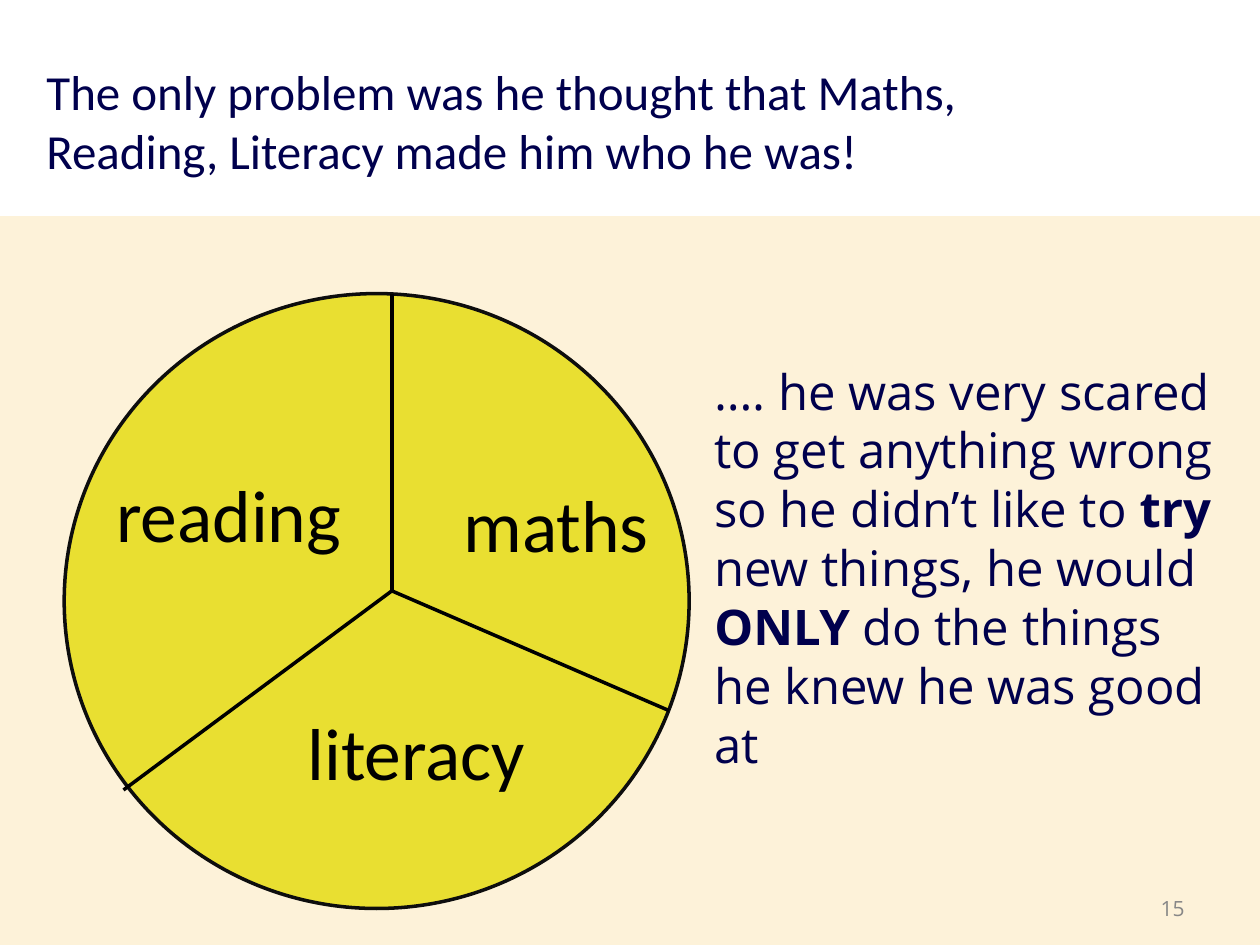
"""Build the slide on the boy who thought three school subjects made him who he was."""
from dataclasses import dataclass

from lxml.etree import SubElement
from pptx import Presentation
from pptx.dml.color import RGBColor
from pptx.enum.shapes import MSO_CONNECTOR, MSO_SHAPE
from pptx.enum.text import MSO_ANCHOR, PP_ALIGN
from pptx.oxml.ns import qn
from pptx.util import Inches, Pt

WIDTH, HEIGHT = Inches(10), Inches(7.5)
NAVY = RGBColor(0x00, 0x00, 0x4D)
BLACK = RGBColor(0x00, 0x00, 0x00)
OUTLINE = RGBColor(0x0D, 0x0D, 0x0D)
GREY = RGBColor(0x87, 0x87, 0x87)
YELLOW = RGBColor(0xE9, 0xDF, 0x31)
CREAM = RGBColor(0xFD, 0xF2, 0xD9)
WHITE = RGBColor(0xFF, 0xFF, 0xFF)
CENTRE = (31.1, 62.53)
SUBJECT_SIZE = (21.3, 10.8)


def to_lengths(*shares: float) -> list[int]:
    """Turn alternating percentages of slide width and height into lengths."""
    return [round(share * (WIDTH, HEIGHT)[index % 2] / 100) for index, share in enumerate(shares)]


@dataclass(frozen=True)
class Box:
    """A rectangle in percentages of the slide's width and height."""
    left: float
    top: float
    width: float
    height: float

    def lengths(self) -> list[int]:
        """Return position and size as slide lengths."""
        return to_lengths(self.left, self.top, self.width, self.height)


@dataclass(frozen=True)
class Label:
    """Text made of (wording, bold) runs, with its place and format."""
    box: Box
    runs: tuple
    font: dict
    frame: dict
    paragraph: dict


@dataclass(frozen=True)
class Sector:
    """A subject of the circle, with its label corner and the rim end of its line."""
    name: str
    corner: tuple
    rim: tuple


SUBJECT_FONT = {"name": "Calibri", "size": Pt(42), "color": BLACK}
HEADING_FONT = {"name": "Calibri", "size": Pt(28), "color": NAVY}
STORY_FONT = {"name": "Open Sans", "size": Pt(28), "color": NAVY}
NUMBER_FONT = {"name": "Open Sans", "size": Pt(12), "color": GREY}
WRAPPED = {"word_wrap": True}
MIDDLE = WRAPPED | {"vertical_anchor": MSO_ANCHOR.MIDDLE}
STORY_MARGINS = {f"margin_{side}": Inches(0.04) for side in ("left", "top", "right", "bottom")}

SECTORS = (
    Sector("maths", (33.5, 50), (31.1, 31.07)),
    Sector("literacy", (22.4, 74.13), (53.1, 75.2)),
    Sector("reading", (7.5, 48.93), (9.8, 83.6)),
)
HEADING = Label(
    Box(2.7, 5.87, 74.8, 13.87),
    (("The only problem was he thought that Maths, Reading, Literacy made him who he was!", False),),
    HEADING_FONT, WRAPPED, {},
)
STORY = Label(
    Box(56.3, 24.8, 41, 70.4),
    (
        ("…. he was very scared to get anything wrong so he didn’t like to ", False),
        ("try", True),
        (" new things, he would ", False),
        ("ONLY", True),
        (" do the things he knew he was good at", False),
    ),
    STORY_FONT, MIDDLE | STORY_MARGINS, {},
)
NUMBER = Label(
    Box(89, 94.13, 6, 3.87), (("15", False),),
    NUMBER_FONT, MIDDLE, {"alignment": PP_ALIGN.RIGHT},
)


def apply_format(target: object, values: dict) -> None:
    """Set each attribute of the target, with colours going to their own object."""
    for name, value in values.items():
        if name == "color":
            target.color.rgb = value
        else:
            setattr(target, name, value)


def draw_shape(slide, kind: MSO_SHAPE, box: Box, fill: RGBColor, line: RGBColor) -> None:
    """Draw a filled and outlined preset shape."""
    shape = slide.shapes.add_shape(kind, *box.lengths())
    shape.shadow.inherit = False
    shape.fill.solid()
    shape.fill.fore_color.rgb = fill
    apply_format(shape.line, {"color": line, "width": Pt(2)})


def draw_label(slide, label: Label) -> None:
    """Draw a text box with one paragraph of runs."""
    frame = slide.shapes.add_textbox(*label.box.lengths()).text_frame
    apply_format(frame, label.frame)
    paragraph = frame.paragraphs[0]
    apply_format(paragraph, label.paragraph)
    for wording, bold in label.runs:
        run = paragraph.add_run()
        run.text = wording
        apply_format(run.font, label.font | {"bold": bold})


def draw_sector(slide, sector: Sector) -> None:
    """Draw the dividing line and the label of one subject."""
    ends = to_lengths(*sector.rim, *CENTRE)
    connector = slide.shapes.add_connector(MSO_CONNECTOR.STRAIGHT, *ends)
    apply_format(connector.line, {"color": BLACK, "width": Pt(2)})
    SubElement(connector._element.spPr, qn("a:effectLst"))
    draw_label(slide, Label(
        Box(*sector.corner, *SUBJECT_SIZE), ((sector.name, False),),
        SUBJECT_FONT, WRAPPED, {"alignment": PP_ALIGN.CENTER},
    ))


def main() -> None:
    """Build and save the slide."""
    presentation = Presentation()
    apply_format(presentation, {"slide_width": WIDTH, "slide_height": HEIGHT})
    slide = presentation.slides.add_slide(presentation.slide_layouts[6])
    slide.background.fill.solid()
    slide.background.fill.fore_color.rgb = CREAM
    draw_shape(slide, MSO_SHAPE.RECTANGLE, Box(0, 0, 100, 22.67), WHITE, WHITE)
    draw_shape(slide, MSO_SHAPE.OVAL, Box(5.1, 31.07, 49.6, 65.07), YELLOW, OUTLINE)
    for sector in SECTORS:
        draw_sector(slide, sector)
    for label in (HEADING, STORY, NUMBER):
        draw_label(slide, label)
    presentation.save("out.pptx")


if __name__ == "__main__":
    main()
